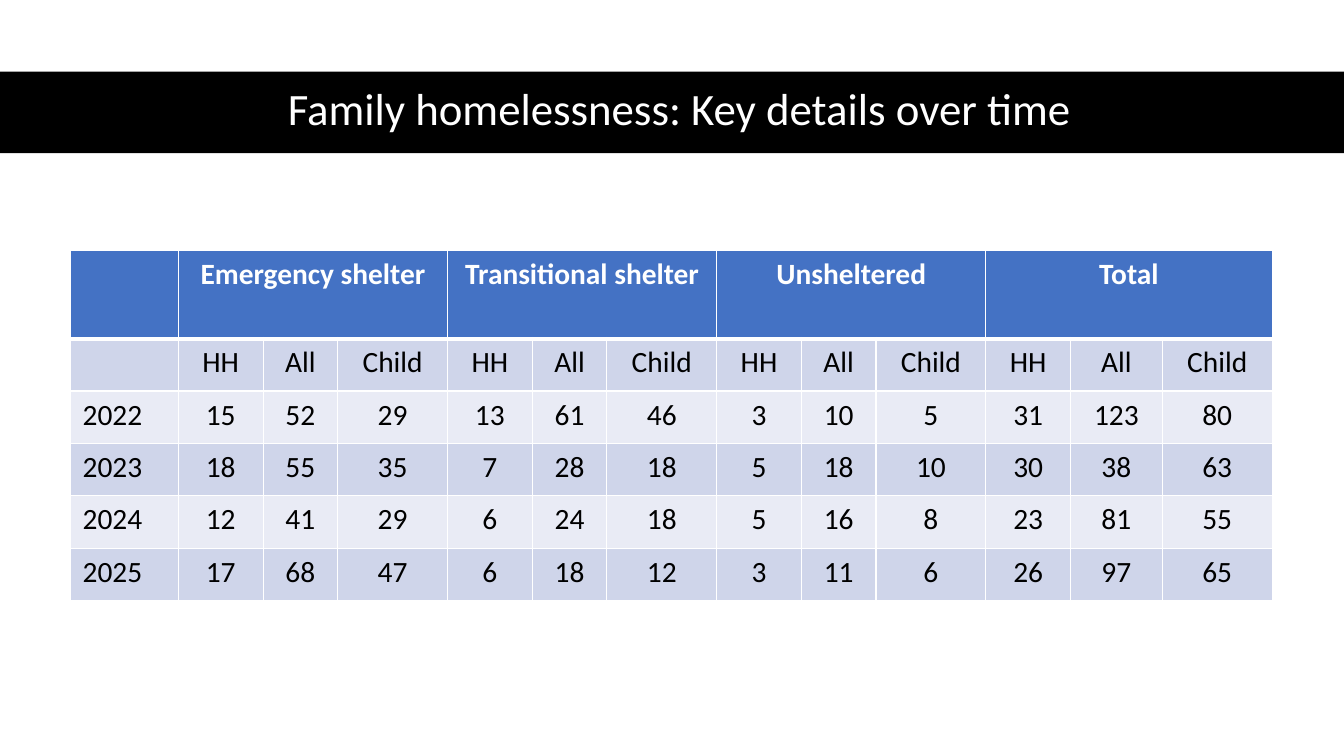
import pptx
import pptx.dml.color
import pptx.enum.shapes
import pptx.enum.text
import pptx.oxml
import pptx.oxml.ns
import pptx.util
from pptx.util import Inches

COLORS = {
    "white": "FFFFFF",
    "black": "000000",
    "header": "4472C4",
    "dark_band": "CFD5EA",
    "light_band": "E9EBF5",
}
CENTER = pptx.enum.text.PP_ALIGN.CENTER
LEFT = pptx.enum.text.PP_ALIGN.LEFT

SHELTER_TYPES = ["Emergency shelter", "Transitional shelter", "Unsheltered", "Total"]
MEASURES = ["HH", "All", "Child"]
COUNTS = {
    "2022": [15, 52, 29, 13, 61, 46, 3, 10, 5, 31, 123, 80],
    "2023": [18, 55, 35, 7, 28, 18, 5, 18, 10, 30, 38, 63],
    "2024": [12, 41, 29, 6, 24, 18, 5, 16, 8, 23, 81, 55],
    "2025": [17, 68, 47, 6, 18, 12, 3, 11, 6, 26, 97, 65],
}
COLUMN_WIDTHS = [1.07] + [0.84, 0.74, 1.09] * 3 + [0.84, 0.91, 1.09]
ROW_HEIGHTS = [0.88] + [0.52] * 5


def rgb(name):
    return pptx.dml.color.RGBColor.from_string(COLORS[name])


def set_values(target, values):
    for name, value in values.items():
        setattr(target, name, value)


def write_text(para, text, size, color, align, bold=False):
    para.alignment = align
    span = para.add_run()
    span.text = text
    set_values(span.font, {"name": "Calibri", "size": pptx.util.Pt(size), "bold": bold})
    span.font.color.rgb = rgb(color)


def add_title(slide, text):
    title = slide.shapes.title
    set_values(title, {"left": Inches(0.61), "top": Inches(0.7),
                       "width": Inches(12.26), "height": Inches(0.81)})
    title.text_frame.vertical_anchor = pptx.enum.text.MSO_ANCHOR.MIDDLE
    para = title.text_frame.paragraphs[0]
    para.line_spacing = 0.9
    write_text(para, text, 32, "white", CENTER)


def add_title_band(slide):
    """Draw the full-width black band and place it behind the title."""
    band = slide.shapes.add_shape(pptx.enum.shapes.MSO_SHAPE.RECTANGLE,
                                  0, Inches(0.71), Inches(13.33), Inches(0.81))
    band.shadow.inherit = False
    band.fill.solid()
    band.fill.fore_color.rgb = rgb("black")
    band.line.fill.background()
    slide.shapes.title.element.addprevious(band.element)


def set_borders(cell, top, bottom):
    """Give a cell white borders; top and bottom are widths in points."""
    properties = cell._tc.get_or_add_tcPr()
    for side, width in {"L": 1, "R": 1, "T": top, "B": bottom}.items():
        properties.append(pptx.oxml.parse_xml(
            f'<a:ln{side} {pptx.oxml.ns.nsdecls("a")} w="{pptx.util.Pt(width)}">'
            f'<a:solidFill><a:srgbClr val="{COLORS["white"]}"/></a:solidFill>'
            f'</a:ln{side}>'))


def format_cell(cell, row, column, text):
    is_header = row == 0
    set_values(cell, {"margin_left": Inches(0.12), "margin_right": Inches(0.12),
                      "margin_top": Inches(0.06), "margin_bottom": Inches(0.06)})
    set_borders(cell, 3 if row == 1 else 1, 3 if is_header else 1)
    cell.fill.solid()
    band = "dark_band" if row % 2 else "light_band"
    cell.fill.fore_color.rgb = rgb("header" if is_header else band)
    if text:
        write_text(cell.text_frame.paragraphs[0], text, 21,
                   "white" if is_header else "black",
                   CENTER if column else LEFT, is_header)


def table_rows():
    header = [""]
    for shelter in SHELTER_TYPES:
        header += [shelter, "", ""]
    rows = [header, [""] + MEASURES * len(SHELTER_TYPES)]
    rows += [[year] + [str(count) for count in counts] for year, counts in COUNTS.items()]
    return rows


def add_counts_table(slide):
    rows = table_rows()
    table = slide.shapes.add_table(len(rows), len(COLUMN_WIDTHS), Inches(0.7), Inches(2.48),
                                   Inches(11.93), Inches(3.5)).table
    for column, width in zip(table.columns, COLUMN_WIDTHS):
        column.width = Inches(width)
    for row, height in zip(table.rows, ROW_HEIGHTS):
        row.height = Inches(height)
    for r, texts in enumerate(rows):
        for c, text in enumerate(texts):
            format_cell(table.cell(r, c), r, c, text)
    step = len(MEASURES)
    for first in range(1, len(COLUMN_WIDTHS), step):
        table.cell(0, first).merge(table.cell(0, first + step - 1))


def main():
    deck = pptx.Presentation()
    set_values(deck, {"slide_width": Inches(13.33), "slide_height": Inches(7.5)})
    slide = deck.slides.add_slide(deck.slide_layouts[5])
    add_title(slide, "Family homelessness: Key details over time")
    add_title_band(slide)
    add_counts_table(slide)
    deck.save("out.pptx")


if __name__ == "__main__":
    main()
